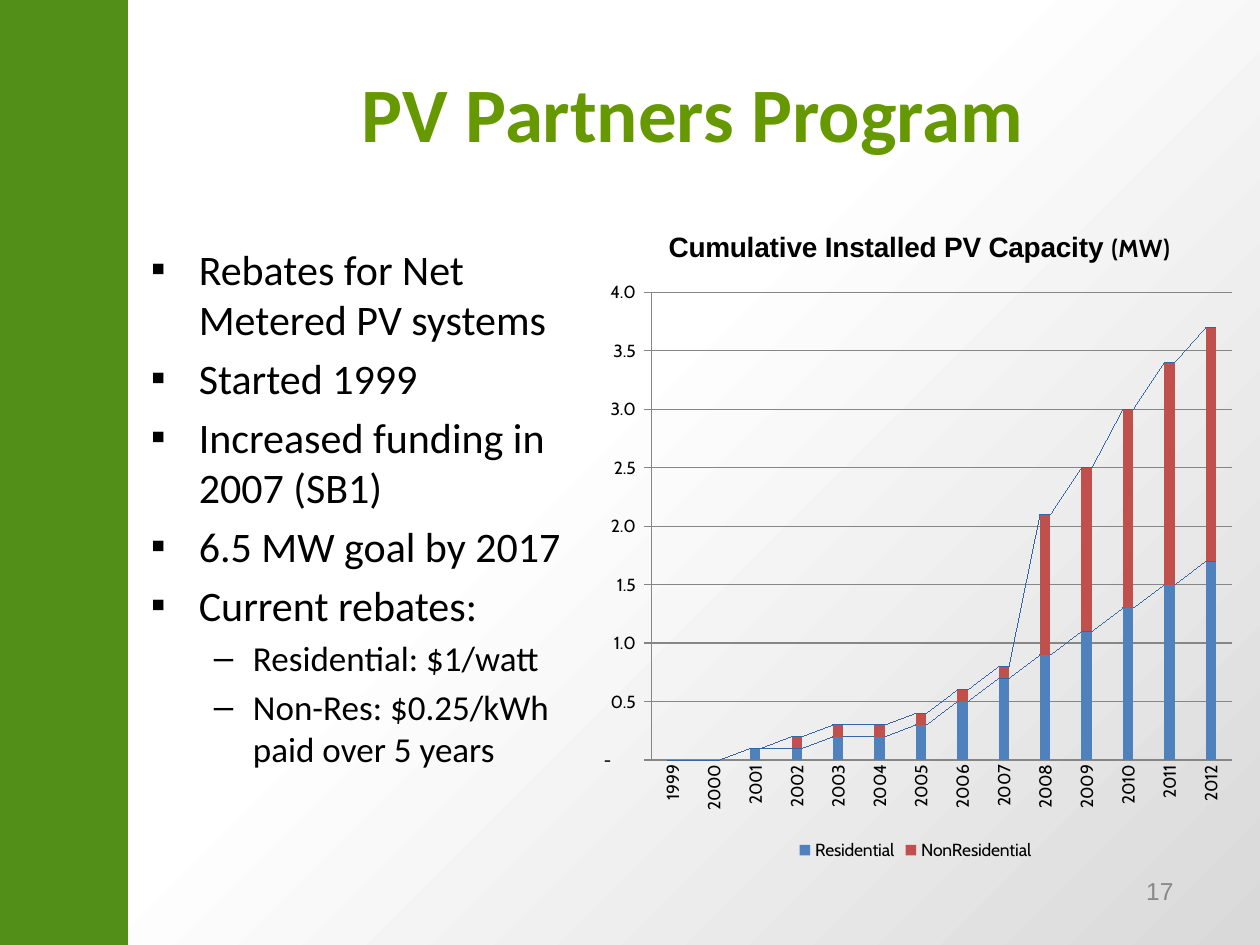
from dataclasses import dataclass

from lxml import etree
from pptx import Presentation
from pptx import util as u
from pptx.chart import data as chart_data
from pptx.dml.color import RGBColor
from pptx.enum import chart as charts, shapes, text
from pptx.oxml import ns, parse_xml


@dataclass(frozen=True)
class Theme:
    band: str = "518F19"
    title: str = "669900"
    body: str = "000000"
    muted: str = "898989"
    grid: str = "868686"
    link: str = "4A7EBB"
    background: tuple = ((0.45, "FFFFFF"), (1, "D9D9D9"))
    series: tuple = ("4F81BD", "C0504D")
    text_font: str = "Calibri"
    heading_font: str = "Arial"
    chart_font: str = "Cabin"
    title_size: int = 44
    body_size: int = 24
    detail_size: int = 20
    number_size: int = 14
    chart_title_size: int = 16
    chart_unit_size: int = 14
    chart_size: int = 10


THEME = Theme()
BULLETS = [
    (0, "Rebates for Net Metered PV systems"),
    (0, "Started 1999"),
    (0, "Increased funding in 2007 (SB1)"),
    (0, "6.5 MW goal by 2017"),
    (0, "Current rebates:"),
    (1, "Residential: $1/watt"),
    (1, "Non-Res: $0.25/kWh paid over 5 years"),
]
LEVELS = [
    ("▪", 0.38, 0.38, THEME.body_size),
    ("–", 0.81, 0.31, THEME.detail_size),
]
CAPACITY = {
    "Residential": (0, 0, 0.1, 0.1, 0.2, 0.2, 0.3, 0.5, 0.7, 0.9, 1.1, 1.3, 1.5, 1.7),
    "NonResidential": (0, 0, 0, 0.1, 0.1, 0.1, 0.1, 0.1, 0.1, 1.2, 1.4, 1.7, 1.9, 2),
}
NUMBER_FORMAT = '_(* #,##0.0_);_(* \\(#,##0.0\\);_(* "-"??_);_(@_)'


def inches(*box):
    return [u.Inches(length) for length in box]


def style(font, name, size, color, bold=False):
    font.name = name
    font.size = u.Pt(size)
    font.bold = bold
    font.color.rgb = RGBColor.from_string(color)


def add_run(paragraph, words, *look):
    run = paragraph.add_run()
    run.text = words
    style(run.font, *look)


def add_text_frame(slide, box, anchor):
    frame = slide.shapes.add_textbox(*inches(*box)).text_frame
    frame.word_wrap = True
    frame.vertical_anchor = anchor
    return frame


def add_background(slide):
    fill = slide.background.fill
    fill.gradient()
    fill.gradient_angle = 315
    for stop, (position, color) in zip(fill.gradient_stops, THEME.background):
        stop.position = position
        stop.color.rgb = RGBColor.from_string(color)


def add_side_band(slide, box):
    band = slide.shapes.add_shape(shapes.MSO_SHAPE.RECTANGLE, *inches(*box))
    band.shadow.inherit = False
    band.fill.solid()
    band.fill.fore_color.rgb = RGBColor.from_string(THEME.band)
    band.line.color.rgb = RGBColor.from_string(THEME.band)
    band.line.width = u.Pt(0.75)


def add_centred_line(slide, box, words, *look):
    frame = add_text_frame(slide, box, text.MSO_ANCHOR.MIDDLE)
    paragraph = frame.paragraphs[0]
    paragraph.alignment = text.PP_ALIGN.CENTER
    add_run(paragraph, words, *look)


def add_bullets(slide, box):
    frame = add_text_frame(slide, box, text.MSO_ANCHOR.TOP)
    for index, (level, words) in enumerate(BULLETS):
        symbol, indent, hanging, size = LEVELS[level]
        paragraph = frame.add_paragraph() if index else frame.paragraphs[0]
        paragraph.level = level
        paragraph.space_before = u.Pt(size * 0.2 if index else 0)
        properties = paragraph._p.get_or_add_pPr()
        properties.set("marL", str(u.Inches(indent)))
        properties.set("indent", str(-u.Inches(hanging)))
        etree.SubElement(properties, ns.qn("a:buFont"), typeface=THEME.heading_font)
        etree.SubElement(properties, ns.qn("a:buChar"), char=symbol)
        add_run(paragraph, words, THEME.text_font, size, THEME.body)


def chart_layout(**places):
    items = "".join(f'<c:{name} val="{value}"/>' for name, value in places.items())
    return parse_xml(
        f'<c:layout {ns.nsdecls("c")}><c:manualLayout>{items}</c:manualLayout></c:layout>'
    )


def add_chart_title(chart):
    title = chart.chart_title
    paragraph = title.text_frame.paragraphs[0]
    add_run(paragraph, "Cumulative Installed PV Capacity ",
            THEME.heading_font, THEME.chart_title_size, THEME.body, True)
    add_run(paragraph, "(MW)", THEME.chart_font, THEME.chart_unit_size, THEME.body, True)
    for old in title._element.findall(ns.qn("c:layout")):
        title._element.remove(old)
    title._element.find(ns.qn("c:tx")).addnext(
        chart_layout(xMode="edge", yMode="edge", x=0.12, y=0.03)
    )


def style_axes(chart):
    grid_color = RGBColor.from_string(THEME.grid)
    category, value = chart.category_axis, chart.value_axis
    category.major_tick_mark = charts.XL_TICK_MARK.NONE
    style(category.tick_labels.font, THEME.chart_font, THEME.chart_size, THEME.body)
    category._element.find(ns.qn("c:txPr")).find(ns.qn("a:bodyPr")).set("rot", "-5400000")
    value.minimum_scale, value.maximum_scale, value.major_unit = 0, 4, 0.5
    value.major_tick_mark = charts.XL_TICK_MARK.OUTSIDE
    value.has_major_gridlines = True
    value.tick_labels.number_format = NUMBER_FORMAT
    value.tick_labels.number_format_is_linked = False
    for line in (category.format.line, value.format.line, value.major_gridlines.format.line):
        line.color.rgb = grid_color
        line.width = u.Pt(0.75)


def add_capacity_chart(slide, box):
    data = chart_data.CategoryChartData(number_format="0.0")
    data.categories = [str(year) for year in range(1999, 2013)]
    for name, values in CAPACITY.items():
        data.add_series(name, values)
    chart = slide.shapes.add_chart(
        charts.XL_CHART_TYPE.COLUMN_STACKED, *inches(*box), data
    ).chart
    style(chart.font, THEME.chart_font, THEME.chart_size, THEME.body)
    add_chart_title(chart)
    style_axes(chart)
    chart.has_legend = True
    chart.legend.position = charts.XL_LEGEND_POSITION.BOTTOM
    chart.legend.include_in_layout = False
    plot = chart.plots[0]
    plot.gap_width, plot.overlap = 300, 100
    plot.vary_by_categories = False
    for series, color in zip(plot.series, THEME.series):
        series.format.fill.solid()
        series.format.fill.fore_color.rgb = RGBColor.from_string(color)
    plot._element.find(ns.qn("c:overlap")).addnext(parse_xml(
        f'<c:serLines {ns.nsdecls("c", "a")}><c:spPr><a:ln w="9525"><a:solidFill>'
        f'<a:srgbClr val="{THEME.link}"/></a:solidFill></a:ln></c:spPr></c:serLines>'
    ))
    area = plot._element.getparent()
    for old in area.findall(ns.qn("c:layout")):
        area.remove(old)
    area.insert(0, chart_layout(layoutTarget="inner", xMode="edge", yMode="edge",
                                x=0.1, y=0.13, w=0.88, h=0.71))


def build_slide(presentation):
    slide = presentation.slides.add_slide(presentation.slide_layouts[6])
    add_background(slide)
    add_side_band(slide, (-0.02, 0, 1.03, 7.5))
    add_centred_line(slide, (8.71, 6.92, 0.99, 0.3), "17",
                     THEME.heading_font, THEME.number_size, THEME.muted)
    add_centred_line(slide, (1.55, 0.26, 7.9, 1.25), "PV Partners Program",
                     THEME.text_font, THEME.title_size, THEME.title, True)
    add_bullets(slide, (1.1, 1.88, 3.67, 4.55))
    add_capacity_chart(slide, (4.65, 1.64, 5.23, 5.23))


def main():
    presentation = Presentation()
    presentation.slide_width, presentation.slide_height = inches(10, 7.5)
    build_slide(presentation)
    presentation.save("out.pptx")


if __name__ == "__main__":
    main()
